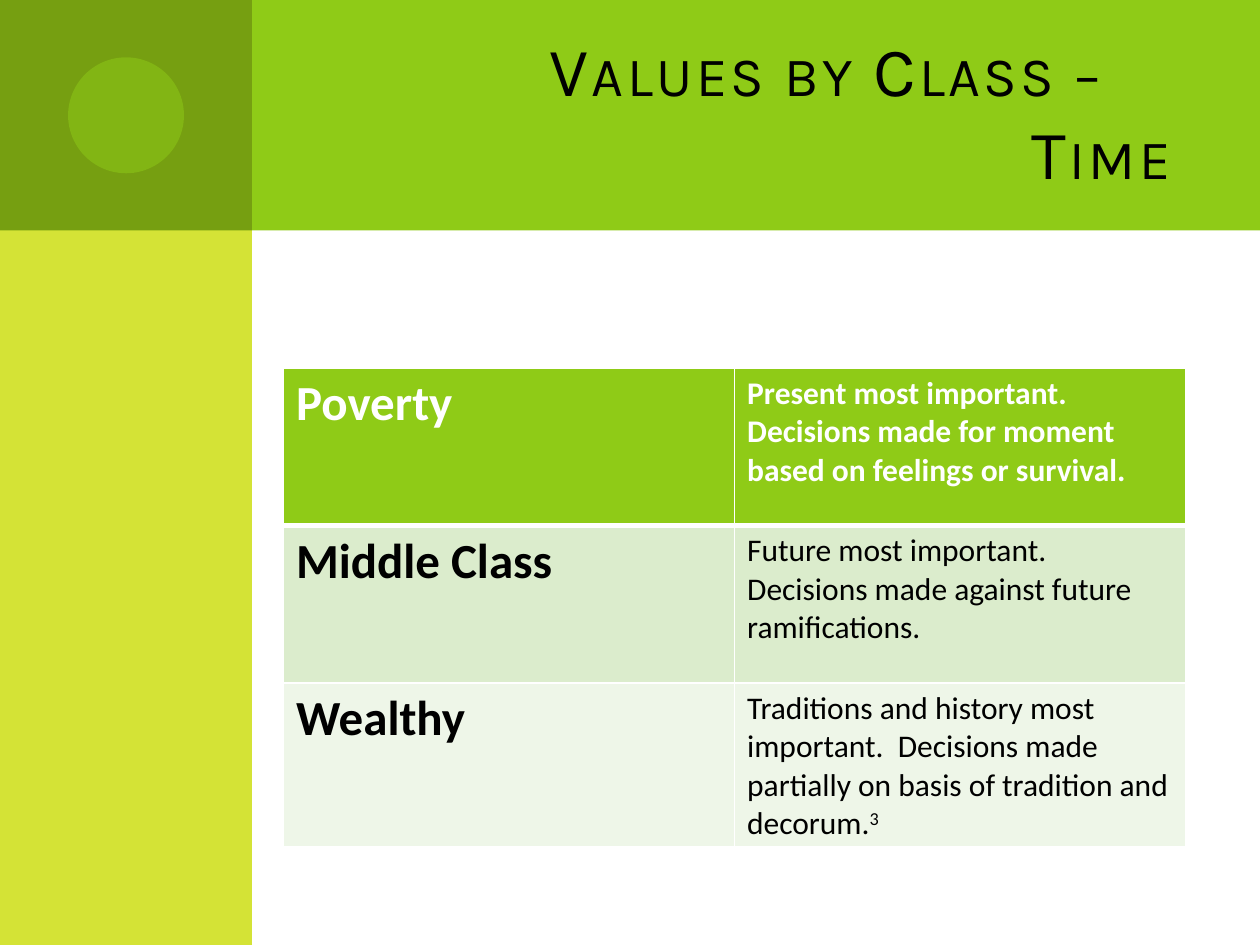
import pptx
import pptx.util
import pptx.dml.color
import pptx.enum.shapes
import pptx.enum.text
import pptx.oxml
import pptx.oxml.ns
from lxml import etree

Inches, Pt = pptx.util.Inches, pptx.util.Pt
qn = pptx.oxml.ns.qn
Kind = pptx.enum.shapes.MSO_SHAPE

GREEN, LIME, OLIVE = "8FCB17", "D4E336", "769F11"
WHITE, BLACK = "FFFFFF", "000000"
SIDE, HEAD, DOT = 2, 1.83, 0.92

TITLE = "Values by Class – \vTime"
# class, view of time, footnote mark, fill, font colour, bold view
ROWS = [
    ("Poverty", "Present most important.  Decisions made for moment "
     "based on feelings or survival.", "", GREEN, WHITE, True),
    ("Middle Class", "Future most important.  Decisions made against "
     "future ramifications.", "", "DBECCC", BLACK, False),
    ("Wealthy", "Traditions and history most important.  Decisions made "
     "partially on basis of tradition and decorum.", "3", "EEF6E8", BLACK, False),
]
PANELS = [
    (Kind.RECTANGLE, 0.5, 0, 9.5, HEAD, GREEN, 100),
    (Kind.RECTANGLE, 0, 0, SIDE, 7.5, LIME, 100),
    (Kind.RECTANGLE, 0, 0, SIDE, HEAD, OLIVE, 100),
    (Kind.OVAL, (SIDE - DOT) / 2, (HEAD - DOT) / 2, DOT, DOT, GREEN, 50),
]


def paint(fill, hue):
    fill.solid()
    fill.fore_color.rgb = pptx.dml.color.RGBColor.from_string(hue)


def style(run, face, size, hue, bold=False):
    font = run.font
    font.name, font.size, font.bold = face, Pt(size), bold
    paint(font.fill, hue)


def edge(cell, side, width):
    """Add a white border; sides must precede the cell's fill."""
    line = etree.SubElement(cell._tc.get_or_add_tcPr(), qn("a:" + side),
                            w=str(Pt(width)))
    solid = etree.SubElement(line, qn("a:solidFill"))
    etree.SubElement(solid, qn("a:srgbClr"), val=WHITE)


def add_panels(slide):
    for kind, left, top, wide, high, hue, alpha in PANELS:
        shape = slide.shapes.add_shape(
            kind, Inches(left), Inches(top), Inches(wide), Inches(high))
        shape.shadow.inherit = False
        shape.line.fill.background()
        paint(shape.fill, hue)
        if alpha < 100:
            tint = shape.fill._xPr.find(".//" + qn("a:srgbClr"))
            etree.SubElement(tint, qn("a:alpha"), val=str(alpha * 1000))


def add_title(slide):
    box = slide.shapes.add_textbox(
        Inches(2.67), Inches(0.25), Inches(6.83), Inches(1.25))
    frame = box.text_frame
    frame.word_wrap = True
    frame.vertical_anchor = pptx.enum.text.MSO_ANCHOR.MIDDLE
    frame.text = TITLE
    para = frame.paragraphs[0]
    para.alignment = pptx.enum.text.PP_ALIGN.RIGHT
    for run in para.runs:
        style(run, "Karla", 39.6, BLACK)
        props = run.font._element
        props.set("spc", "200")
        props.set("cap", "small")


def add_table(slide):
    table = slide.shapes.add_table(
        len(ROWS), 2, Inches(2.25), Inches(2.92),
        Inches(7.16), Inches(3.75)).table
    for y, (name, view, mark, fill, hue, bold) in enumerate(ROWS):
        table.rows[y].height = Inches(1.25)
        for x, (text, size, heavy) in enumerate(
                [(name, 28, True), (view, 18, bold)]):
            cell = table.cell(y, x)
            cell.text = text
            para = cell.text_frame.paragraphs[0]
            style(para.runs[0], "Calibri", size, hue, heavy)
            if x and mark:
                note = para.add_run()
                note.text = mark
                style(note, "Calibri", size, hue, heavy)
                note.font._element.set("baseline", "30000")
            for side in ("lnL", "lnR", "lnT", "lnB"):
                thick = (y, side) in ((0, "lnB"), (1, "lnT"))
                edge(cell, side, 3 if thick else 1)
            paint(cell.fill, fill)


deck = pptx.Presentation()
deck.slide_width, deck.slide_height = Inches(10), Inches(7.5)
page = deck.slides.add_slide(deck.slide_layouts[6])
add_panels(page)
add_title(page)
add_table(page)
deck.save("out.pptx")
